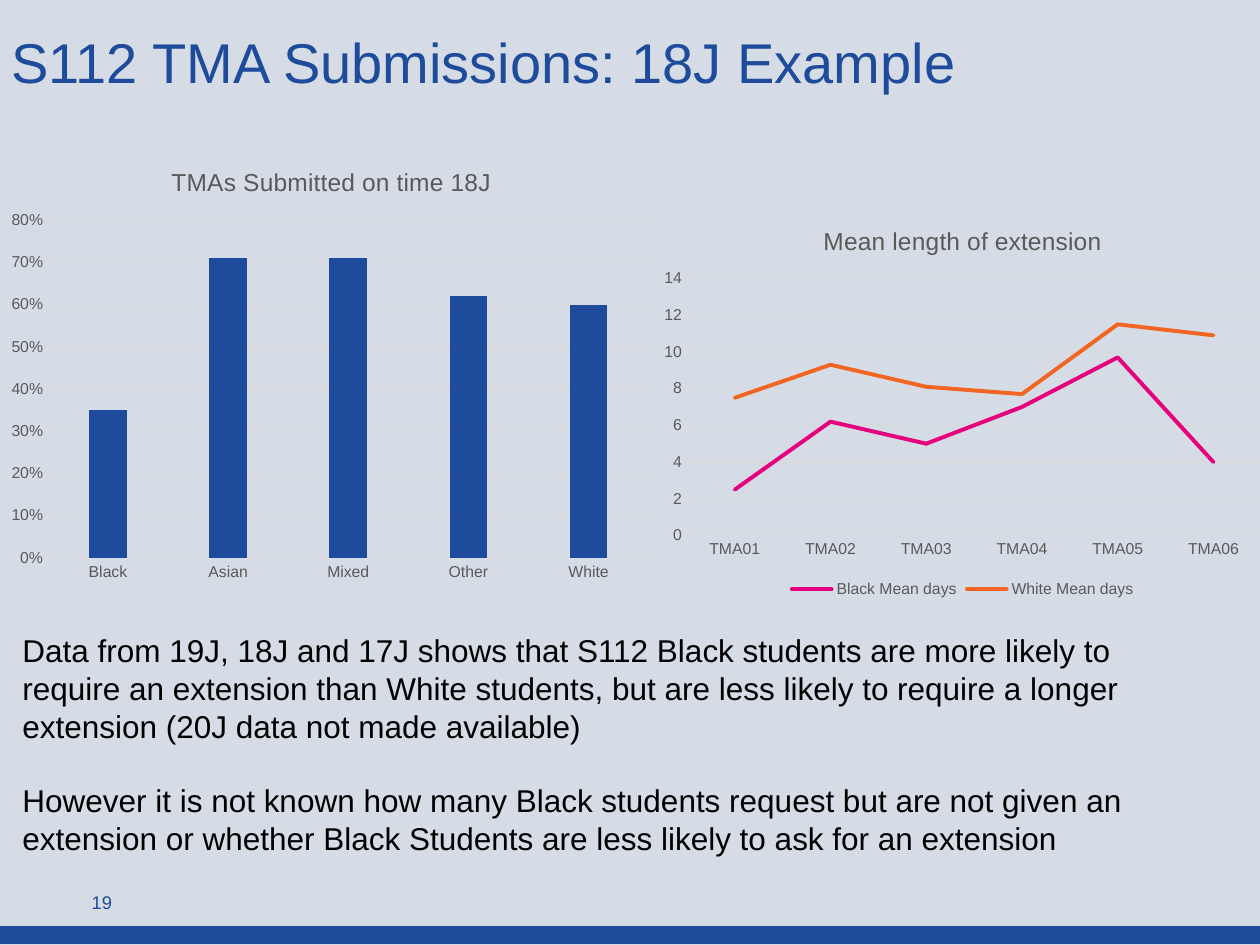
from lxml.etree import SubElement
from pptx import Presentation
from pptx.chart.data import CategoryChartData
from pptx.dml.color import RGBColor
from pptx.enum.chart import XL_CHART_TYPE, XL_LEGEND_POSITION, XL_TICK_MARK
from pptx.enum.shapes import MSO_SHAPE
from pptx.enum.text import MSO_ANCHOR, PP_ALIGN
from pptx.oxml.ns import qn
from pptx.util import Inches, Pt

HUES = {"back": "D6DCE5", "blue": "1E4B9B", "grid": "D9D9D9", "gray": "595959",
        "black": "000000", "pink": "E5007D", "orange": "F26522"}
TITLE = "S112 TMA Submissions: 18J Example"
NOTES = [
    "Data from 19J, 18J and 17J shows that S112 Black students are more likely to "
    "require an extension than White students, but are less likely to require a longer "
    "extension (20J data not made available)",
    "However it is not known how many Black students request but are not given an "
    "extension or whether Black Students are less likely to ask for an extension",
]
PAGE = "19"
CHARTS = [
    {"title": "TMAs Submitted on time 18J", "kind": XL_CHART_TYPE.COLUMN_CLUSTERED,
     "box": (-0.01, 1.16, 5.28, 3.53), "plot": (0.38, 1.75, 4.77, 2.68),
     "cats": ["Black", "Asian", "Mixed", "Other", "White"],
     "series": [("Series 1", [0.35, 0.71, 0.71, 0.62, 0.6], "blue")],
     "top": 0.8, "step": 0.1, "format": "0%"},
    {"title": "Mean length of extension", "kind": XL_CHART_TYPE.LINE,
     "box": (-0.01 + 5.18, 1.64, 4.94, 3.15), "plot": (5.45, 2.21, 4.56, 2.04),
     "cats": [f"TMA0{n}" for n in range(1, 7)],
     "series": [("Black Mean days", [2.5, 6.2, 5, 7, 9.7, 4], "pink"),
                ("White Mean days", [7.5, 9.3, 8.1, 7.7, 11.5, 10.9], "orange")],
     "top": 14, "step": 2, "format": "General"},
]


def color(name):
    return RGBColor.from_string(HUES[name])


def style(font, size, hue):
    font.name = "Arial"
    font.size = Pt(size)
    font.bold = False
    font.color.rgb = color(hue)


def write(shape, box, texts, size, hue, gap=0, lead=1.0):
    shape.left, shape.top, shape.width, shape.height = map(Inches, box)
    frame = shape.text_frame
    frame.word_wrap = True
    frame.vertical_anchor = MSO_ANCHOR.TOP
    for n, text in enumerate(texts):
        para = frame.add_paragraph() if n else frame.paragraphs[0]
        para.alignment = PP_ALIGN.LEFT
        para.line_spacing = lead
        para.space_before = Pt(gap if n else 0)
        run = para.add_run()
        run.text = text
        style(run.font, size, hue)
    return frame


def place(chart, box, plot):
    area = chart._chartSpace.chart.plotArea
    for old in area.findall(qn("c:layout")):
        area.remove(old)
    layout = SubElement(area, qn("c:layout"))
    area.insert(0, layout)
    manual = SubElement(layout, qn("c:manualLayout"))
    left, top, width, height = box
    parts = [("layoutTarget", "inner"), ("xMode", "edge"), ("yMode", "edge"),
             ("x", round((plot[0] - left) / width, 3)),
             ("y", round((plot[1] - top) / height, 3)),
             ("w", round(plot[2] / width, 3)), ("h", round(plot[3] / height, 3))]
    for tag, value in parts:
        SubElement(manual, qn(f"c:{tag}")).set("val", str(value))


def draw(slide, item):
    data = CategoryChartData(number_format=item["format"])
    data.categories = item["cats"]
    for name, values, _ in item["series"]:
        data.add_series(name, values)
    chart = slide.shapes.add_chart(item["kind"], *map(Inches, item["box"]), data).chart
    style(chart.font, 10, "black")
    chart.has_title = True
    run = chart.chart_title.text_frame.paragraphs[0].add_run()
    run.text = item["title"]
    style(run.font, 14, "gray")
    chart.chart_title.include_in_layout = False

    for axis in (chart.category_axis, chart.value_axis):
        axis.major_tick_mark = axis.minor_tick_mark = XL_TICK_MARK.NONE
        style(axis.tick_labels.font, 9, "gray")
    base = chart.category_axis.format.line
    base.color.rgb = color("grid")
    base.width = Pt(0.75)
    scale = chart.value_axis
    scale.minimum_scale, scale.maximum_scale = 0, item["top"]
    scale.major_unit = item["step"]
    scale.tick_labels.number_format = item["format"]
    scale.tick_labels.number_format_is_linked = False
    scale.format.line.fill.background()
    scale.has_major_gridlines = True
    grid = scale.major_gridlines.format.line
    grid.color.rgb = color("grid")
    grid.width = Pt(0.75)

    plot = chart.plots[0]
    plot.vary_by_categories = False
    bars = item["kind"] == XL_CHART_TYPE.COLUMN_CLUSTERED
    if bars:
        plot.gap_width, plot.overlap = 219, -27
    for series, (_, _, hue) in zip(plot.series, item["series"]):
        if bars:
            series.format.fill.solid()
            series.format.fill.fore_color.rgb = color(hue)
        else:
            series.smooth = False
            series.format.line.color.rgb = color(hue)
            series.format.line.width = Pt(2.25)
            series.format.line._ln.set("cap", "rnd")
    chart.has_legend = not bars
    if not bars:
        chart.legend.position = XL_LEGEND_POSITION.BOTTOM
        chart.legend.include_in_layout = False
        style(chart.legend.font, 9, "gray")
    place(chart, item["box"], item["plot"])


def main():
    deck = Presentation()
    deck.slide_width, deck.slide_height = Inches(10), Inches(7.5)
    slide = deck.slides.add_slide(deck.slide_layouts[5])
    slide.background.fill.solid()
    slide.background.fill.fore_color.rgb = color("back")

    bar = slide.shapes.add_shape(MSO_SHAPE.RECTANGLE, *map(Inches, (0, 7.36, 10, 0.13)))
    bar.shadow.inherit = False
    bar.fill.solid()
    bar.fill.fore_color.rgb = bar.line.color.rgb = color("blue")
    bar.line.width = Pt(1)

    head = write(slide.shapes.title, (-0.01, 0.2, 7.82, 0.46), [TITLE], 32, "blue", lead=0.9)
    head.margin_top = Inches(0.08)
    for box, texts, size, hue, gap, lead in [
        ((0.63, 7.04, 7.93, 0.31), [PAGE], 10.5, "blue", 0, 0.9),
        ((0.08, 4.96, 9.53, 1.92), NOTES, 18, "black", 21, 1.0),
    ]:
        shape = slide.shapes.add_textbox(*map(Inches, box))
        write(shape, box, texts, size, hue, gap, lead)
    for item in CHARTS:
        draw(slide, item)
    deck.save("out.pptx")


if __name__ == "__main__":
    main()
